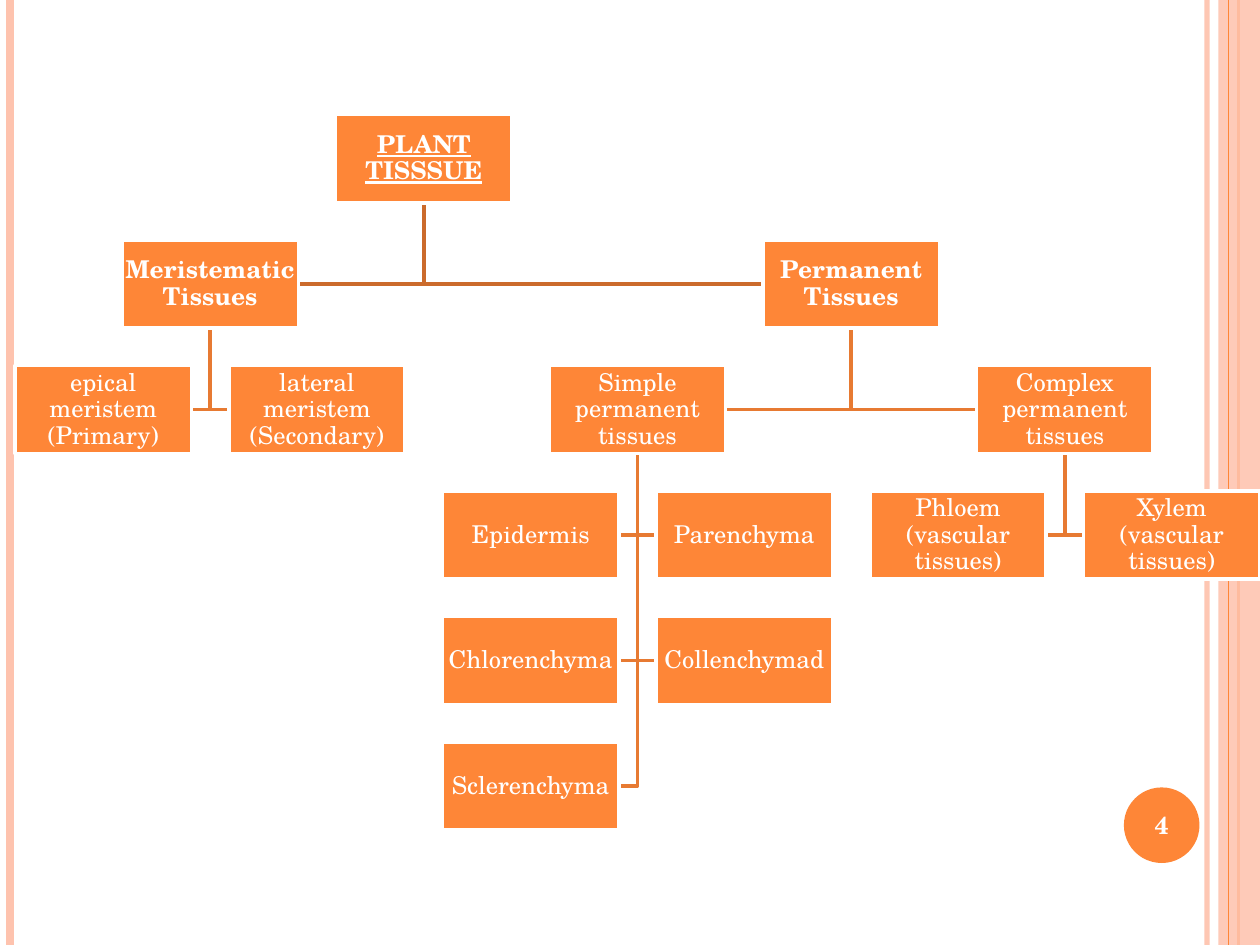
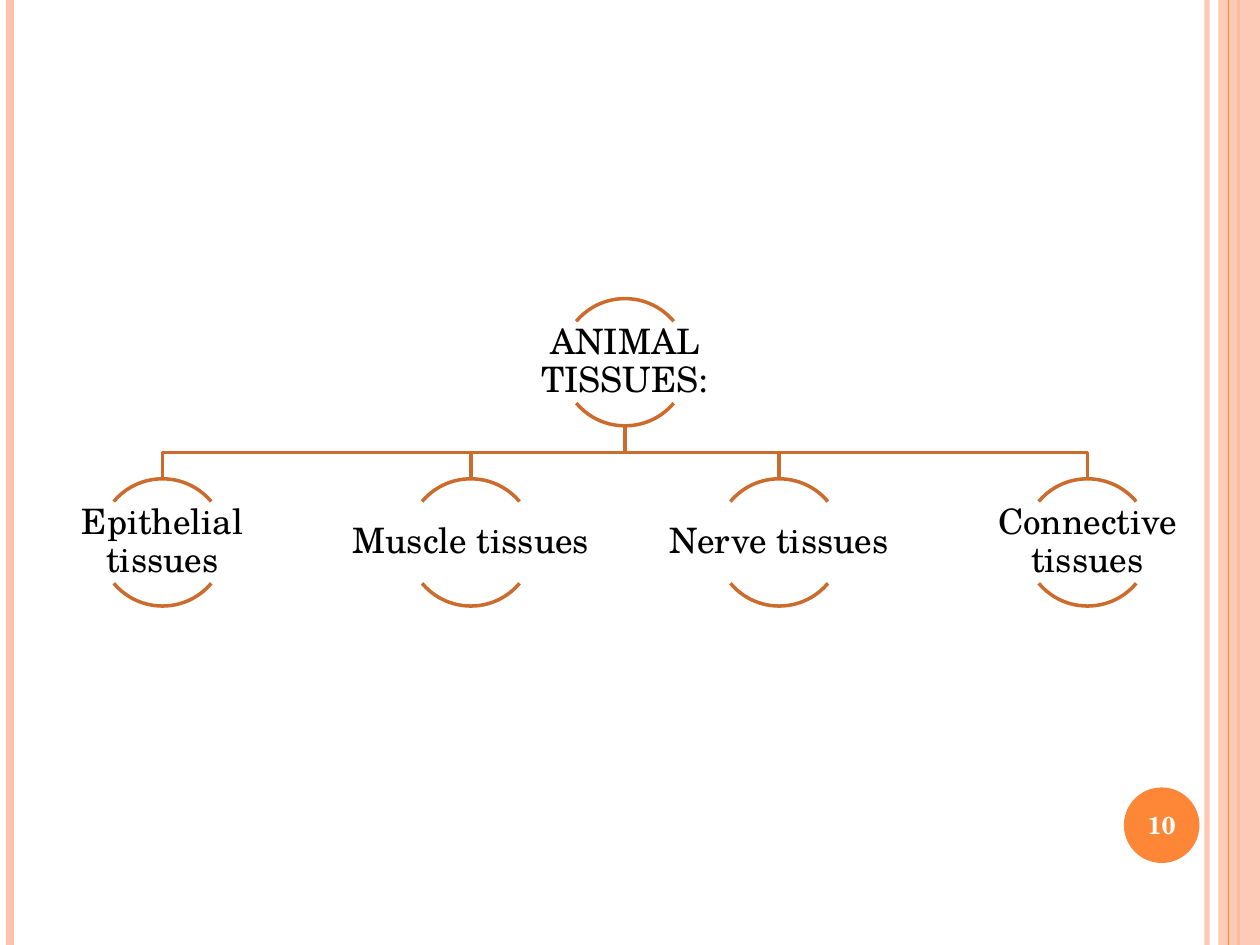
from dataclasses import dataclass

from pptx import Presentation
from pptx.dml.color import RGBColor
from pptx.enum.shapes import MSO_CONNECTOR, MSO_SHAPE
from pptx.enum.text import MSO_ANCHOR, PP_ALIGN
from pptx.oxml.ns import qn
from pptx.util import Emu, Inches, Pt

RECT = MSO_SHAPE.RECTANGLE
OVAL = MSO_SHAPE.OVAL
ARC = MSO_SHAPE.ARC
LINE = MSO_CONNECTOR.STRAIGHT
CENTER = PP_ALIGN.CENTER
MIDDLE = MSO_ANCHOR.MIDDLE

WIDE = Inches(10)
HIGH = Inches(7.5)
FONT = "TeX Gyre Schola"
INSET = Inches(0.01)
STROKE = 2

ORANGE = "FE8637"
PINK = "FEC3AE"
BROWN = "CB6B2C"
AMBER = "E77A32"
WHITE = "FFFFFF"
BLACK = "000000"


@dataclass(frozen=True)
class Box:
    left: float
    top: float
    width: float
    height: float

    @property
    def mid(self) -> tuple[float, float]:
        return self.left + self.width / 2, self.top + self.height / 2

    @property
    def right(self) -> float:
        return self.left + self.width

    @property
    def base(self) -> float:
        return self.top + self.height

    def spot(self) -> tuple[Emu, Emu, Emu, Emu]:
        return across(self.left), down(self.top), across(self.width), down(self.height)


@dataclass(frozen=True)
class Grid:
    left: float
    top: float
    step: float
    drop: float
    width: float
    height: float

    def cell(self, col: float, row: int) -> Box:
        return Box(self.left + col * self.step, self.top + row * self.drop,
                   self.width, self.height)


@dataclass(frozen=True)
class Style:
    size: int
    color: str
    bold: bool = False
    under: bool = False


@dataclass(frozen=True)
class Node:
    text: str
    col: float
    row: int
    boss: str = ""
    style: Style = Style(14, WHITE)


@dataclass(frozen=True)
class Stripe:
    left: float
    color: str
    weight: float
    alpha: int = 100


HEAD = Style(14, WHITE, bold=True)
TITLE = Style(14, WHITE, bold=True, under=True)
LABEL = Style(20, BLACK)

UNDER = (Stripe(95.8, PINK, 3, 93), Stripe(0.8, PINK, 4.5), Stripe(98.3, ORANGE, 1.5))
OVER = Stripe(97.5, ORANGE, 0.75)
BAND = Box(96.7, 0, 3.3, 100)
BADGE = Box(89.2, 83.33, 6, 8)

PLANT = Grid(left=1.2, top=12.13, step=8.48, drop=13.28, width=14, height=9.33)
ANIMAL = Grid(left=7.85, top=31.6, step=24.47, drop=19.07, width=10.1, height=13.47)
CURVES = ((132, 192), (24, 84))

PLANTS = (
    Node("PLANT TISSSUE", 3, 0, style=TITLE),
    Node("Meristematic Tissues", 1, 1, "PLANT TISSSUE", HEAD),
    Node("epical meristem (Primary)", 0, 2, "Meristematic Tissues"),
    Node("lateral meristem (Secondary)", 2, 2, "Meristematic Tissues"),
    Node("Permanent Tissues", 7, 1, "PLANT TISSSUE", HEAD),
    Node("Simple permanent tissues", 5, 2, "Permanent Tissues"),
    Node("Epidermis", 4, 3, "Simple permanent tissues"),
    Node("Parenchyma", 6, 3, "Simple permanent tissues"),
    Node("Chlorenchyma", 4, 4, "Simple permanent tissues"),
    Node("Collenchymad", 6, 4, "Simple permanent tissues"),
    Node("Sclerenchyma", 4, 5, "Simple permanent tissues"),
    Node("Complex permanent tissues", 9, 2, "Permanent Tissues"),
    Node("Phloem (vascular tissues)", 8, 3, "Complex permanent tissues"),
    Node("Xylem (vascular tissues)", 10, 3, "Complex permanent tissues"),
)
ROOT = "ANIMAL TISSUES:"
KINDS = ("Epithelial tissues", "Muscle tissues", "Nerve tissues", "Connective tissues")


def across(share: float) -> Emu:
    return Emu(round(WIDE * share / 100))


def down(share: float) -> Emu:
    return Emu(round(HIGH * share / 100))


def paint(color: str) -> RGBColor:
    return RGBColor.from_string(color)


def fade(item, alpha: int) -> None:
    for tint in item._element.iter(qn("a:srgbClr")):
        tint.makeelement(qn("a:alpha"), {})
        mark = tint.makeelement(qn("a:alpha"), {"val": str(alpha * 1000)})
        tint.append(mark)


def dress(shape, fill: str = "", line: str = "") -> None:
    shape.shadow.inherit = False
    if fill:
        shape.fill.solid()
        shape.fill.fore_color.rgb = paint(fill)
    else:
        shape.fill.background()
    if line:
        shape.line.color.rgb = paint(line)
        shape.line.width = Pt(STROKE)
    else:
        shape.line.fill.background()


def write(shape, text: str, style: Style, space: float = 0.9) -> None:
    frame = shape.text_frame
    frame.word_wrap = True
    frame.vertical_anchor = MIDDLE
    frame.margin_left = frame.margin_right = INSET
    frame.margin_top = frame.margin_bottom = INSET
    para = frame.paragraphs[0]
    para.alignment = CENTER
    para.line_spacing = space
    run = para.add_run()
    run.text = text
    font = run.font
    font.name = FONT
    font.size = Pt(style.size)
    font.bold = style.bold
    font.underline = style.under
    font.color.rgb = paint(style.color)


def block(slide, kind, box: Box, fill: str = "", line: str = ""):
    shape = slide.shapes.add_shape(kind, *box.spot())
    dress(shape, fill, line)
    return shape


def rule(slide, stripe: Stripe) -> None:
    place = across(stripe.left)
    line = slide.shapes.add_connector(LINE, place, 0, place, HIGH)
    line.line.color.rgb = paint(stripe.color)
    line.line.width = Pt(stripe.weight)
    if stripe.alpha < 100:
        fade(line, stripe.alpha)
    props = line._element.spPr
    props.append(props.makeelement(qn("a:effectLst"), {}))


def link(slide, points: list[tuple[float, float]], color: str) -> None:
    first, *rest = [(across(x), down(y)) for x, y in points]
    path = slide.shapes.build_freeform(*first)
    path.add_line_segments(rest, close=False)
    dress(path.convert_to_shape(), line=color)


def start(deck, number: int):
    slide = deck.slides.add_slide(deck.slide_layouts[6])
    for stripe in UNDER:
        rule(slide, stripe)
    fade(block(slide, RECT, BAND, PINK), 87)
    rule(slide, OVER)
    write(block(slide, OVAL, BADGE, ORANGE), str(number), HEAD, 1.0)
    return slide


def plants(slide) -> None:
    boxes = {node.text: PLANT.cell(node.col, node.row) for node in PLANTS}
    for node in PLANTS:
        if node.boss:
            boss, box = boxes[node.boss], boxes[node.text]
            x, y = boss.mid[0], box.mid[1]
            side = box.left if box.left > boss.left else box.right
            color = BROWN if node.row == 1 else AMBER
            link(slide, [(x, boss.base), (x, y), (side, y)], color)
    for node in PLANTS:
        write(block(slide, RECT, boxes[node.text], ORANGE, WHITE), node.text, node.style)


def ring(slide, box: Box, text: str) -> None:
    for curve in CURVES:
        arc = block(slide, ARC, box, line=BROWN)
        arc.adjustments[0], arc.adjustments[1] = curve
    x, y = box.mid
    wide, high = box.width * 2, 8.67
    area = Box(x - wide / 2, y - high / 2, wide, high)
    write(slide.shapes.add_textbox(*area.spot()), text, LABEL)


def animals(slide) -> None:
    root = ANIMAL.cell((len(KINDS) - 1) / 2, 0)
    cells = [ANIMAL.cell(col, 1) for col in range(len(KINDS))]
    x = root.mid[0]
    for cell in cells:
        end, bend = cell.mid[0], (root.base + cell.top) / 2
        link(slide, [(x, root.base), (x, bend), (end, bend), (end, cell.top)], BROWN)
    ring(slide, root, ROOT)
    for cell, kind in zip(cells, KINDS):
        ring(slide, cell, kind)


def main() -> None:
    deck = Presentation()
    deck.slide_width = WIDE
    deck.slide_height = HIGH
    plants(start(deck, 4))
    animals(start(deck, 10))
    deck.save("out.pptx")


if __name__ == "__main__":
    main()
